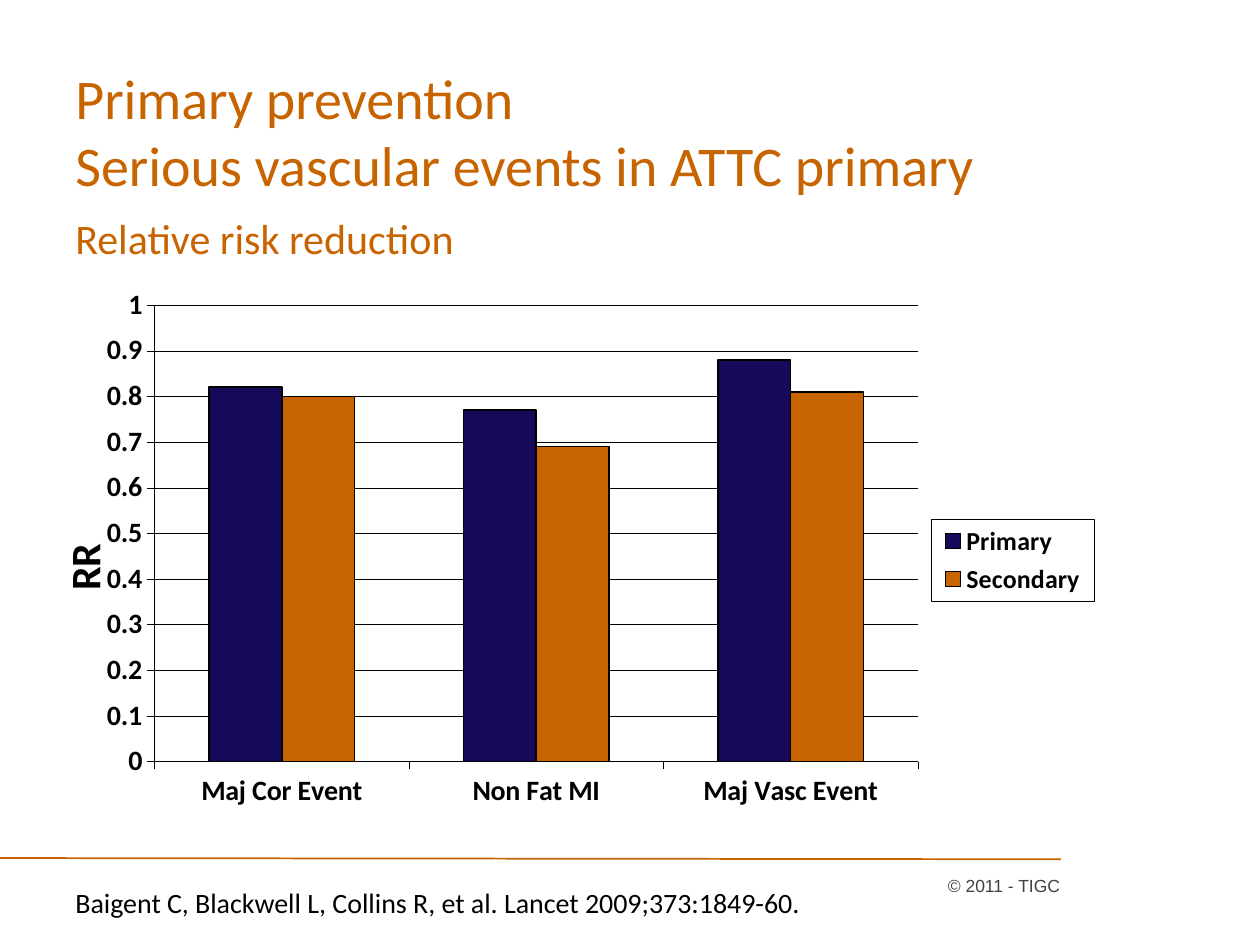
from lxml import etree
from pptx import Presentation
from pptx.chart.data import CategoryChartData
from pptx.dml.color import RGBColor
from pptx.enum.chart import XL_CHART_TYPE as ChartType
from pptx.enum.chart import XL_LEGEND_POSITION as LegendPosition
from pptx.enum.chart import XL_TICK_LABEL_POSITION as LabelPosition
from pptx.enum.chart import XL_TICK_MARK as TickMark
from pptx.enum.shapes import MSO_CONNECTOR as Connector
from pptx.enum.text import MSO_ANCHOR as Anchor
from pptx.enum.text import PP_ALIGN as Align
from pptx.oxml import parse_xml
from pptx.oxml.ns import nsdecls, qn
from pptx.util import Inches, Pt

ORANGE = RGBColor(0xC8, 0x64, 0x00)
NAVY = RGBColor(0x15, 0x09, 0x5A)
BLACK = RGBColor(0, 0, 0)
GREY = RGBColor(0x41, 0x41, 0x41)

CATEGORIES = ["Maj Cor Event", "Non Fat MI", "Maj Vasc Event"]
SERIES = [
    ("Primary", [0.82, 0.77, 0.88], NAVY),
    ("Secondary", [0.8, 0.69, 0.81], ORANGE),
]


def set_line(line, color, width):
    line.color.rgb = color
    line.width = Pt(width)


def manual_layout(x, y, width, height, inner=False):
    """Return a chart layout element given as fractions of the chart."""
    target = '<c:layoutTarget val="inner"/>' if inner else ""
    return parse_xml(
        f'<c:layout {nsdecls("c")}><c:manualLayout>{target}'
        '<c:xMode val="edge"/><c:yMode val="edge"/>'
        f'<c:x val="{x}"/><c:y val="{y}"/><c:w val="{width}"/><c:h val="{height}"/>'
        "</c:manualLayout></c:layout>"
    )


class SlideBuilder:
    font_name = "Calibri"
    axis_size = 16
    legend_size = 14.8
    axis_width = 0.22
    bar_width = 0.9

    def __init__(self, slide):
        self.slide = slide

    def style_font(self, font, size, color=BLACK, bold=False, name=None):
        font.name = name or self.font_name
        font.size = Pt(size)
        font.bold = bold
        font.color.rgb = color

    def text(self, lines, left, top, width, height, size, color=BLACK,
             bold=False, name=None, align=Align.LEFT, anchor=Anchor.TOP, rotation=0):
        box = self.slide.shapes.add_textbox(
            Inches(left), Inches(top), Inches(width), Inches(height))
        box.rotation = rotation
        frame = box.text_frame
        frame.word_wrap = True
        frame.vertical_anchor = anchor
        for index, line in enumerate(lines):
            paragraph = frame.add_paragraph() if index else frame.paragraphs[0]
            paragraph.alignment = align
            run = paragraph.add_run()
            run.text = line
            self.style_font(run.font, size, color, bold, name)

    def rule(self, start, end, color, width):
        connector = self.slide.shapes.add_connector(
            Connector.STRAIGHT, *(Inches(value) for value in (*start, *end)))
        set_line(connector.line, color, width)
        etree.SubElement(connector._element.spPr, qn("a:effectLst"))

    def style_axis(self, axis):
        axis.major_tick_mark = TickMark.OUTSIDE
        axis.minor_tick_mark = TickMark.NONE
        set_line(axis.format.line, BLACK, self.axis_width)
        self.style_font(axis.tick_labels.font, self.axis_size, bold=True)

    def column_chart(self, left, top, width, height):
        data = CategoryChartData()
        data.categories = CATEGORIES
        for name, values, _ in SERIES:
            data.add_series(name, values)
        chart = self.slide.shapes.add_chart(
            ChartType.COLUMN_CLUSTERED, Inches(left), Inches(top),
            Inches(width), Inches(height), data).chart
        chart.has_title = False
        self.style_font(chart.font, self.axis_size, bold=True)

        plot = chart.plots[0]
        plot.gap_width = 150
        plot.overlap = 0
        plot.vary_by_categories = False
        for series, (_, _, color) in zip(plot.series, SERIES):
            series.format.fill.solid()
            series.format.fill.fore_color.rgb = color
            set_line(series.format.line, BLACK, self.bar_width)

        self.style_axis(chart.category_axis)
        chart.category_axis.tick_label_position = LabelPosition.LOW
        value_axis = chart.value_axis
        self.style_axis(value_axis)
        value_axis.minimum_scale, value_axis.maximum_scale = 0, 1
        value_axis.major_unit = 0.1
        value_axis.tick_labels.number_format = "General"
        value_axis.tick_labels.number_format_is_linked = False
        set_line(value_axis.major_gridlines.format.line, BLACK, self.axis_width)

        plot_area = chart._chartSpace.chart.plotArea
        for layout in plot_area.findall(qn("c:layout")):
            plot_area.remove(layout)
        plot_area.insert(0, manual_layout(0.06, 0.035, 0.761, 0.835, inner=True))
        self.legend(chart)

    def legend(self, chart):
        chart.has_legend = True
        legend = chart.legend
        legend.position = LegendPosition.RIGHT
        legend.include_in_layout = False
        self.style_font(legend.font, self.legend_size, bold=True)
        element = legend._element
        for layout in element.findall(qn("c:layout")):
            element.remove(layout)
        element.find(qn("c:legendPos")).addnext(manual_layout(0.834, 0.426, 0.163, 0.15))
        element.find(qn("c:txPr")).addprevious(parse_xml(
            f'<c:spPr {nsdecls("c", "a")}><a:noFill/>'
            f'<a:ln w="{Pt(self.axis_width)}"><a:solidFill>'
            f'<a:srgbClr val="{BLACK}"/></a:solidFill></a:ln></c:spPr>'))


def main():
    presentation = Presentation()
    presentation.slide_width = Inches(10)
    presentation.slide_height = Inches(7.5)
    builder = SlideBuilder(presentation.slides.add_slide(presentation.slide_layouts[6]))

    builder.column_chart(0.75, 2.27, 7.96, 4.34)
    builder.text(["Relative risk reduction"], 0.5, 1.6, 9, 0.57, 24, ORANGE,
                 anchor=Anchor.MIDDLE)
    builder.text(["Baigent C, Blackwell L, Collins R, et al. Lancet 2009;373:1849-60."],
                 0.5, 6.98, 6.75, 0.37, 16)
    builder.text(["RR"], 0.08, 4.25, 1.17, 0.5, 24, bold=True,
                 align=Align.CENTER, rotation=270)
    builder.text(["Primary prevention", "Serious vascular events in ATTC primary"],
                 0.5, 0.41, 9, 1.25, 32, ORANGE, anchor=Anchor.MIDDLE)
    builder.rule((8.42, 6.82), (0, 6.81), ORANGE, 1)
    builder.text(["© 2011 - TIGC"], 5.34, 6.83, 3.17, 0.4, 10, GREY, name="Arial",
                 align=Align.RIGHT, anchor=Anchor.MIDDLE)

    presentation.save("out.pptx")


if __name__ == "__main__":
    main()
